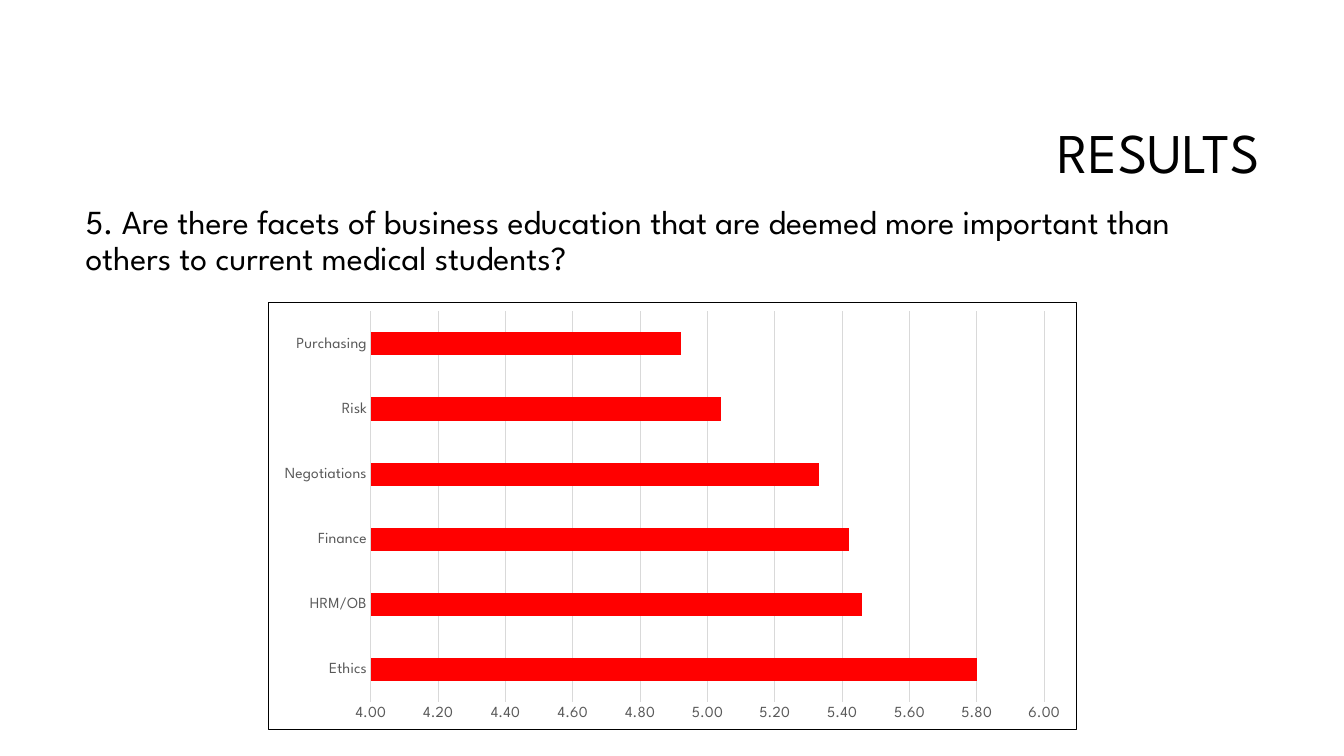
from dataclasses import dataclass

import pptx
import pptx.chart.data
import pptx.dml.color
import pptx.enum.chart
import pptx.enum.text
import pptx.oxml
import pptx.slide
import pptx.util

PX = 9144  # EMU per px, 100 px to the inch
FONT = "League Spartan"
BLACK = pptx.dml.color.RGBColor(0x00, 0x00, 0x00)
RED = pptx.dml.color.RGBColor(0xFF, 0x00, 0x00)
LABEL_GRAY = pptx.dml.color.RGBColor(0x59, 0x59, 0x59)
GRID_GRAY = pptx.dml.color.RGBColor(0xD9, 0xD9, 0xD9)
IMPORTANCE = {
    "Ethics": 5.80,
    "HRM/OB": 5.46,
    "Finance": 5.42,
    "Negotiations": 5.33,
    "Risk": 5.04,
    "Purchasing": 4.92,
}
CHART_BORDER = (
    '<c:spPr xmlns:c="http://schemas.openxmlformats.org/drawingml/2006/chart" '
    'xmlns:a="http://schemas.openxmlformats.org/drawingml/2006/main">'
    '<a:noFill/><a:ln w="9525"><a:solidFill><a:srgbClr val="000000"/>'
    "</a:solidFill></a:ln></c:spPr>"
)


@dataclass(frozen=True)
class Box:
    left: int
    top: int
    width: int
    height: int

    def emu(self) -> list[int]:
        return [side * PX for side in (self.left, self.top, self.width, self.height)]


@dataclass(frozen=True)
class TextBlock:
    box: Box
    text: str
    size: int
    alignment: pptx.enum.text.PP_ALIGN
    anchor: pptx.enum.text.MSO_ANCHOR


TEXT_BLOCKS = [
    TextBlock(
        Box(317, 84, 942, 141), "RESULTS", 40,
        pptx.enum.text.PP_ALIGN.RIGHT, pptx.enum.text.MSO_ANCHOR.MIDDLE,
    ),
    TextBlock(
        Box(75, 199, 1183, 88),
        "5. Are there facets of business education that are deemed more "
        "important than others to current medical students?", 24,
        pptx.enum.text.PP_ALIGN.LEFT, pptx.enum.text.MSO_ANCHOR.TOP,
    ),
]
CHART_BOX = Box(266, 300, 802, 424)


def set_attributes(target: object, values: dict) -> None:
    for name, value in values.items():
        setattr(target, name, value)


def set_font(font: object, size: int, color: pptx.dml.color.RGBColor) -> None:
    set_attributes(font, {"name": FONT, "size": pptx.util.Pt(size)})
    font.color.rgb = color


def set_line(line: object, color: pptx.dml.color.RGBColor) -> None:
    line.color.rgb = color
    line.width = pptx.util.Pt(0.75)


def add_text(slide: pptx.slide.Slide, block: TextBlock) -> None:
    frame = slide.shapes.add_textbox(*block.box.emu()).text_frame
    set_attributes(frame, {"word_wrap": True, "vertical_anchor": block.anchor})
    paragraph = frame.paragraphs[0]
    set_attributes(paragraph, {
        "text": block.text, "alignment": block.alignment, "line_spacing": 0.9,
    })
    set_font(paragraph.runs[0].font, block.size, BLACK)


def add_importance_chart(slide: pptx.slide.Slide) -> None:
    data = pptx.chart.data.CategoryChartData(number_format="0.00")
    data.categories = list(IMPORTANCE)
    data.add_series("Series 1", list(IMPORTANCE.values()))
    chart = slide.shapes.add_chart(
        pptx.enum.chart.XL_CHART_TYPE.BAR_CLUSTERED, *CHART_BOX.emu(), data
    ).chart
    set_attributes(chart, {"has_legend": False, "has_title": False})
    set_font(chart.font, 10, BLACK)

    # Bars
    plot = chart.plots[0]
    set_attributes(plot, {"gap_width": 182, "vary_by_categories": False})
    fill = plot.series[0].format.fill
    fill.solid()
    fill.fore_color.rgb = RED

    # Axes
    no_tick = pptx.enum.chart.XL_TICK_MARK.NONE
    for axis in (chart.category_axis, chart.value_axis):
        set_attributes(axis, {"major_tick_mark": no_tick, "minor_tick_mark": no_tick})
        set_font(axis.tick_labels.font, 11, LABEL_GRAY)
    chart.category_axis.has_major_gridlines = False
    set_line(chart.category_axis.format.line, GRID_GRAY)
    scale = chart.value_axis
    set_attributes(scale, {
        "minimum_scale": 4, "maximum_scale": 6, "major_unit": 0.2,
        "has_major_gridlines": True,
    })
    set_attributes(scale.tick_labels, {
        "number_format": "0.00", "number_format_is_linked": False,
    })
    set_line(scale.major_gridlines.format.line, GRID_GRAY)
    scale.format.line.fill.background()

    # Frame around the chart
    plot_holder = chart.element.find("{*}chart")
    plot_holder.addnext(pptx.oxml.parse_xml(CHART_BORDER))


def main() -> None:
    presentation = pptx.Presentation()
    set_attributes(presentation, {"slide_width": 1333 * PX, "slide_height": 750 * PX})
    slide = presentation.slides.add_slide(presentation.slide_layouts[6])
    for block in TEXT_BLOCKS:
        add_text(slide, block)
    add_importance_chart(slide)
    presentation.save("out.pptx")


if __name__ == "__main__":
    main()
